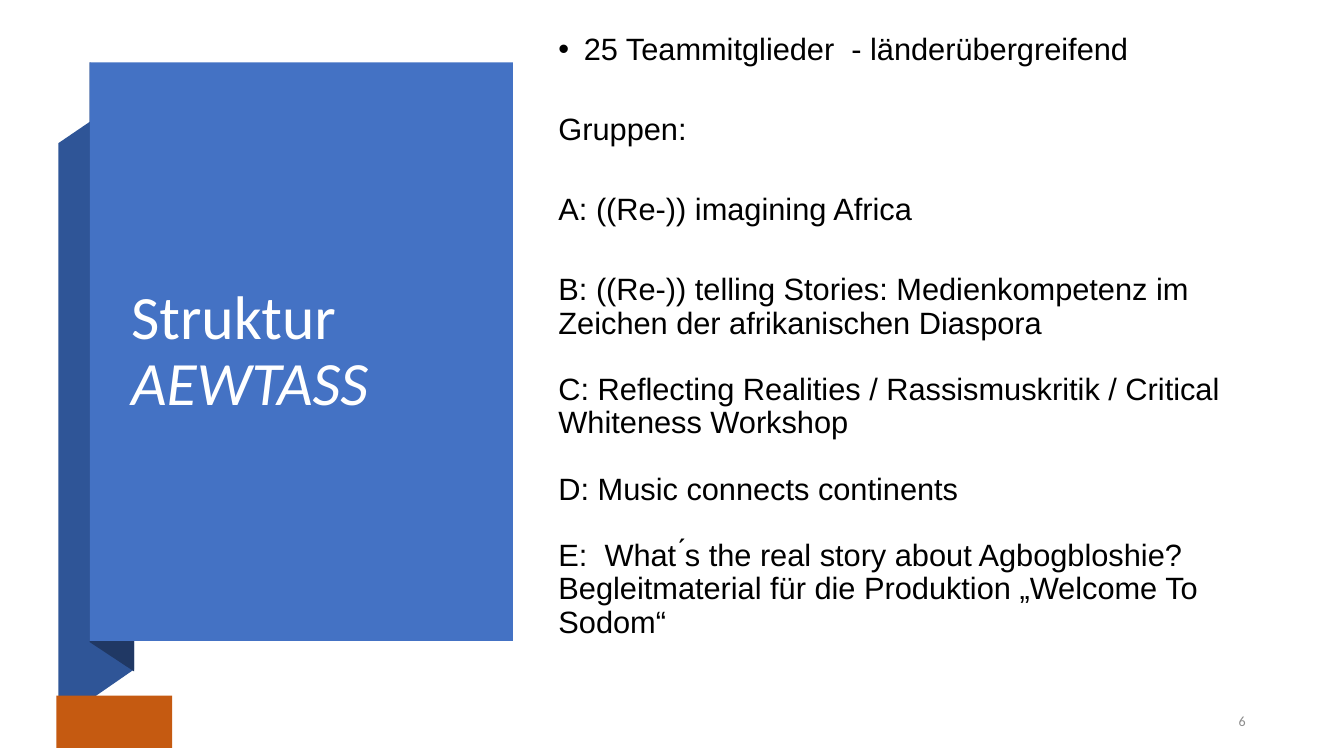
"""Builds the slide on the structure of the AEWTASS project."""
from pptx import Presentation
from pptx import util as u
from pptx.dml.color import RGBColor
from pptx.enum import shapes, text
from pptx.oxml import parse_xml
from pptx.oxml.ns import nsdecls

WHITE = RGBColor(0xFF, 0xFF, 0xFF)
BLACK = RGBColor(0x00, 0x00, 0x00)
GREY = RGBColor(0x8C, 0x8C, 0x8C)
BLUE = RGBColor(0x44, 0x72, 0xC4)
RIBBON_BLUE = RGBColor(0x2F, 0x55, 0x97)
FOLD_BLUE = RGBColor(0x20, 0x38, 0x64)
ORANGE = RGBColor(0xC5, 0x5A, 0x11)

WIDE_GAP, GROUP_GAP = 33.5, 23.7
STRUCTURE = [
    ("25 Teammitglieder  - länderübergreifend", 0),
    ("Gruppen:", WIDE_GAP),
    ("A: ((Re-)) imagining Africa", WIDE_GAP),
    ("B: ((Re-)) telling Stories: Medienkompetenz im Zeichen der "
     "afrikanischen Diaspora", WIDE_GAP),
    ("C: Reflecting Realities / Rassismuskritik / Critical Whiteness Workshop",
     GROUP_GAP),
    ("D: Music connects continents", GROUP_GAP),
    ("E:  What ́s the real story about Agbogbloshie? Begleitmaterial für die "
     "Produktion „Welcome To Sodom“", GROUP_GAP),
]


def paint(part, color):
    """Give a shape a flat fill without outline or shadow."""
    part.fill.solid()
    part.fill.fore_color.rgb = color
    part.line.fill.background()
    part.shadow.inherit = False


def add_panel(slide, box, color):
    """Add a plain rectangle, its box given in centimetres."""
    panel = slide.shapes.add_shape(shapes.MSO_SHAPE.RECTANGLE, *map(u.Cm, box))
    paint(panel, color)


def add_outline(slide, corners, color):
    """Add a filled polygon from corners in centimetres."""
    start, *others = [(u.Cm(x), u.Cm(y)) for x, y in corners]
    builder = slide.shapes.build_freeform(*start)
    builder.add_line_segments(others, close=True)
    paint(builder.convert_to_shape(), color)


def place(slide, part, box):
    """Move a placeholder to its box and in front of the other shapes."""
    part.left, part.top, part.width, part.height = map(u.Cm, box)
    slide.shapes._spTree.append(part._element)
    part.text_frame.vertical_anchor = text.MSO_ANCHOR.MIDDLE
    part.text_frame.word_wrap = True
    part.text_frame.auto_size = text.MSO_AUTO_SIZE.NONE


def style_run(run, family, size, color):
    """Set the font of a run."""
    run.font.name, run.font.size = family, u.Pt(size)
    run.font.color.rgb = color


def set_bullet(paragraph, bulleted):
    """Switch the bullet and hanging indent of a paragraph on or off."""
    properties = paragraph._p.get_or_add_pPr()
    indent = u.Cm(0.64) if bulleted else 0
    properties.set("marL", str(indent))
    properties.set("indent", str(-indent))
    if bulleted:
        properties.append(parse_xml(f'<a:buFont {nsdecls("a")} typeface="Arial"/>'))
    mark = 'buChar {} char="•"' if bulleted else "buNone {}"
    properties.append(parse_xml(f'<a:{mark.format(nsdecls("a"))}/>'))


def fill_title(slide):
    """Write the title, with the project name in italics."""
    title = slide.shapes.title
    place(slide, title, (3.05, 2.46, 8.97, 12.85))
    heading = title.text_frame.paragraphs[0]
    heading.alignment = text.PP_ALIGN.LEFT
    heading.line_spacing = 0.9
    for words, italic in (("Struktur ", False), ("AEWTASS", True)):
        run = heading.add_run()
        run.text = words
        style_run(run, "Calibri", 44, WHITE)
        run.font.italic = italic


def fill_structure(slide):
    """Write the team line and the list of groups."""
    body = slide.placeholders[1]
    place(slide, body, (13.82, 2.46, 18.14, 12.83))
    frame = body.text_frame
    frame.margin_bottom = u.Cm(0.9)
    frame.text = "\n".join(words for words, _ in STRUCTURE)
    for index, (entry, (_, gap)) in enumerate(zip(frame.paragraphs, STRUCTURE)):
        entry.line_spacing = 0.9
        entry.space_before = u.Pt(gap)
        set_bullet(entry, index == 0)
        style_run(entry.runs[0], "Arial", 22, BLACK)


def add_page_number(slide, number):
    """Write the page number at the lower right."""
    label = slide.shapes.add_textbox(*map(u.Cm, (29.74, 17.73, 1.9, 0.89)))
    frame = label.text_frame
    frame.word_wrap = True
    frame.vertical_anchor = text.MSO_ANCHOR.MIDDLE
    frame.text = number
    line = frame.paragraphs[0]
    line.alignment = text.PP_ALIGN.RIGHT
    line.space_after = u.Pt(6)
    style_run(line.runs[0], "Calibri", 10, GREY)


def main():
    """Build and save the slide."""
    deck = Presentation()
    deck.slide_width, deck.slide_height = u.Cm(33.87), u.Cm(19.05)
    slide = deck.slides.add_slide(deck.slide_layouts[1])
    add_outline(slide, [(1.47, 18.19), (3.38, 16.87), (3.38, 2.31), (1.47, 3.61)],
                RIBBON_BLUE)
    add_outline(slide, [(2.26, 16.18), (3.38, 16.92), (3.38, 2.29), (2.26, 1.57)],
                FOLD_BLUE)
    add_panel(slide, (2.26, 1.57, 10.67, 14.58), BLUE)
    fill_title(slide)
    fill_structure(slide)
    add_page_number(slide, "6")
    add_panel(slide, (1.42, 17.53, 2.92, 1.32), ORANGE)
    deck.save("out.pptx")


if __name__ == "__main__":
    main()
